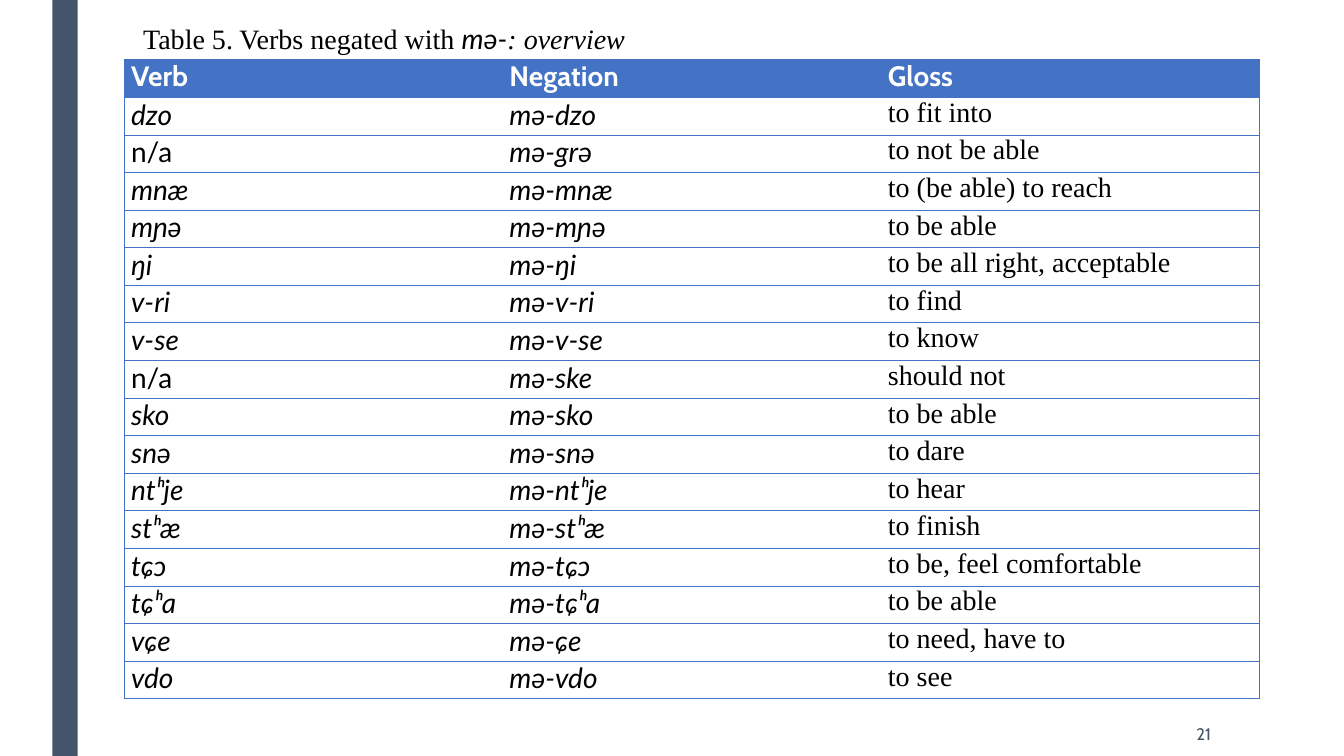
from dataclasses import dataclass

from lxml import etree
from pptx import Presentation
from pptx import util as u
from pptx.dml.color import RGBColor
from pptx.enum import shapes, text
from pptx.oxml.ns import qn


@dataclass(frozen=True)
class Theme:
    slate: str = "44546A"
    blue: str = "4472C4"
    white: str = "FFFFFF"
    black: str = "000000"
    head: str = "Cabin"
    word: str = "Lato"
    serif: str = "Times New Roman"
    main: int = 20
    small: int = 12
    rule: float = 0.5


class Deck:
    def __init__(self, theme):
        self.theme = theme
        self.prs = Presentation()
        self.prs.slide_width = u.Inches(13.33)
        self.prs.slide_height = u.Inches(7.5)
        self.slide = self.prs.slides.add_slide(self.prs.slide_layouts[5])

    def box(self, left, top, width, height):
        col, row = self.prs.slide_width / 100, self.prs.slide_height / 100
        return [round(n) for n in (left * col, top * row, width * col, height * row)]

    def run(self, para, words, face, size, color, bold=False, slant=False):
        run = para.add_run()
        run.text = words
        font = run.font
        font.name, font.size = face, u.Pt(size)
        font.bold, font.italic = bold, slant
        font.color.rgb = RGBColor.from_string(color)

    def title(self, area, parts):
        shape = self.slide.shapes.title
        shape.left, shape.top, shape.width, shape.height = self.box(*area)
        frame = shape.text_frame
        frame.auto_size = text.MSO_AUTO_SIZE.NONE
        frame.vertical_anchor = text.MSO_ANCHOR.TOP
        para = frame.paragraphs[0]
        para.alignment = text.PP_ALIGN.LEFT
        para.line_spacing = 0.89
        for words, face, slant in parts:
            self.run(para, words, face, self.theme.main, self.theme.black, slant=slant)

    def bar(self, area):
        shape = self.slide.shapes.add_shape(shapes.MSO_SHAPE.RECTANGLE, *self.box(*area))
        shape.shadow.inherit = False
        shape.fill.solid()
        shape.fill.fore_color.rgb = RGBColor.from_string(self.theme.slate)
        shape.line.fill.background()

    def number(self, area, words):
        frame = self.slide.shapes.add_textbox(*self.box(*area)).text_frame
        frame.word_wrap = True
        frame.vertical_anchor = text.MSO_ANCHOR.MIDDLE
        para = frame.paragraphs[0]
        para.alignment = text.PP_ALIGN.RIGHT
        self.run(para, words, self.theme.head, self.theme.small, self.theme.slate)

    def edge(self, cell, sides):
        props = cell._tc.get_or_add_tcPr()
        for side in "LRTB":
            line = etree.SubElement(props, qn("a:ln" + side), w=str(u.Pt(self.theme.rule)))
            if side in sides:
                fill = etree.SubElement(line, qn("a:solidFill"))
                etree.SubElement(fill, qn("a:srgbClr"), val=self.theme.blue)
            else:
                etree.SubElement(line, qn("a:noFill"))

    def cell(self, cell, words, sides, face, color, bold, slant, fill):
        cell.margin_left = cell.margin_right = u.Inches(0.07)
        cell.margin_top = cell.margin_bottom = 0
        self.edge(cell, sides)
        if fill:
            cell.fill.solid()
            cell.fill.fore_color.rgb = RGBColor.from_string(fill)
        else:
            cell.fill.background()
        para = cell.text_frame.paragraphs[0]
        para.alignment = text.PP_ALIGN.JUSTIFY
        self.run(para, words, face, self.theme.main, color, bold, slant)

    def table(self, area, rows):
        look = self.theme
        place = self.box(*area)
        last = len(rows[0]) - 1
        table = self.slide.shapes.add_table(len(rows), last + 1, *place).table
        table.horz_banding = False
        for row in table.rows:
            row.height = round(place[3] / len(rows))
        for r, row in enumerate(rows):
            for c, words in enumerate(row):
                sides = "TB" + "L" * (c == 0) + "R" * (c == last)
                if r == 0:
                    style = look.head, look.white, True, False, look.blue
                elif c == last:
                    style = look.serif, look.black, False, False, None
                else:
                    style = look.word, look.black, False, words != "n/a", None
                self.cell(table.cell(r, c), words, sides, *style)

    def save(self):
        self.prs.save("out.pptx")


VERBS = [
    ("Verb", "Negation", "Gloss"),
    ("dzo", "mə-dzo", "to fit into"),
    ("n/a", "mə-grə", "to not be able"),
    ("mnæ", "mə-mnæ", "to (be able) to reach"),
    ("mɲə", "mə-mɲə", "to be able"),
    ("ŋi", "mə-ŋi", "to be all right, acceptable"),
    ("v-ri", "mə-v-ri", "to find"),
    ("v-se", "mə-v-se", "to know"),
    ("n/a", "mə-ske", "should not"),
    ("sko", "mə-sko", "to be able"),
    ("snə", "mə-snə", "to dare"),
    ("ntʰje", "mə-ntʰje", "to hear"),
    ("stʰæ", "mə-stʰæ", "to finish"),
    ("tɕɔ", "mə-tɕɔ", "to be, feel comfortable"),
    ("tɕʰa", "mə-tɕʰa", "to be able"),
    ("vɕe", "mə-ɕe", "to need, have to"),
    ("vdo", "mə-vdo", "to see"),
]


def main():
    theme = Theme()
    deck = Deck(theme)
    deck.bar((3.9, 0, 1.88, 100))
    deck.table((9.23, 7.9, 84.47, 84.53), VERBS)
    deck.number((77.72, 94.13, 13.13, 5.87), "21")
    deck.title((9.9, 2.67, 78.77, 21.6), [
        ("Table 5. Verbs negated with ", theme.serif, False),
        ("mə-", theme.word, True),
        (": overview", theme.serif, True),
    ])
    deck.save()


if __name__ == "__main__":
    main()
